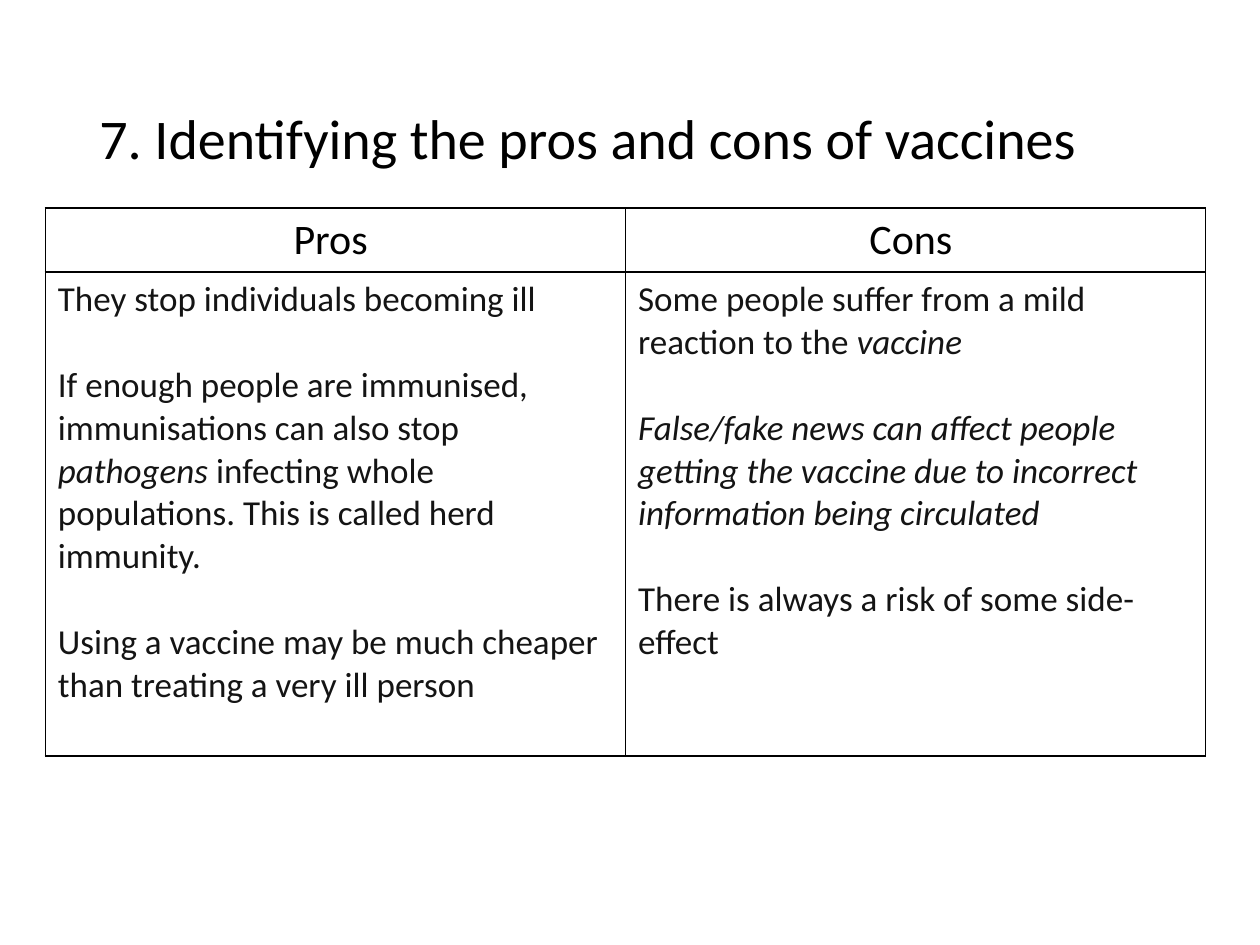
from pptx import Presentation, util as u
from pptx.dml.color import RGBColor
from pptx.enum import text
from pptx.oxml import parse_xml
from pptx.oxml.ns import nsdecls

FONT = "Calibri"
BODY_SIZE = 20
PARAGRAPH_GAP = 24.4

PROS = [
    [("They stop individuals becoming ill", False)],
    [
        ("If enough people are immunised, immunisations can also stop ", False),
        ("pathogens", True),
        (" infecting whole populations. This is called herd immunity.", False),
    ],
    [("Using a vaccine may be much cheaper than treating a very ill person", False)],
]
CONS = [
    [("Some people suffer from a mild reaction to the ", False), ("vaccine", True)],
    [("False/fake news can affect people getting the vaccine due to incorrect "
      "information being circulated ", True)],
    [("There is always a risk of some side-effect", False)],
]


def rgb(value):
    return RGBColor.from_string(value)


def add_run(p, words, size, color, italic=False):
    r = p.add_run()
    r.text = words
    r.font.name = FONT
    r.font.size = u.Pt(size)
    r.font.italic = italic
    r.font.color.rgb = rgb(color)


def add_border(cell, color, width):
    tc_pr = cell._tc.get_or_add_tcPr()
    for index, side in enumerate(("lnL", "lnR", "lnT", "lnB")):
        tc_pr.insert(index, parse_xml(
            f'<a:{side} {nsdecls("a")} w="{u.Pt(width)}"><a:solidFill>'
            f'<a:srgbClr val="{color}"/></a:solidFill></a:{side}>'))


def add_title(s, left, top, width, height):
    sp = s.shapes.add_textbox(left, top, width, height)
    tf = sp.text_frame
    tf.word_wrap = True
    tf.vertical_anchor = text.MSO_ANCHOR.MIDDLE
    p = tf.paragraphs[0]
    p.line_spacing = 0.9
    add_run(p, "7. Identifying the pros and cons of vaccines", 32, "000000")


def fill_body(tf, paragraphs):
    for index, runs in enumerate(paragraphs):
        p = tf.paragraphs[0] if index == 0 else tf.add_paragraph()
        if index:
            p.space_before = u.Pt(PARAGRAPH_GAP)
        for words, italic in runs:
            add_run(p, words, BODY_SIZE, "141414", italic)


def add_comparison(s, left, top, width, height):
    columns = [("Pros ", PROS), ("Cons ", CONS)]
    table = s.shapes.add_table(2, len(columns), left, top, width, height).table
    table.first_row = False
    table.horz_banding = False
    table.rows[0].height = u.Inches(0.51)
    table.rows[1].height = height - table.rows[0].height
    for index, (heading, paragraphs) in enumerate(columns):
        header, body = table.cell(0, index), table.cell(1, index)
        p = header.text_frame.paragraphs[0]
        p.alignment = text.PP_ALIGN.CENTER
        add_run(p, heading, 24, "000000")
        fill_body(body.text_frame, paragraphs)
        for cell in (header, body):
            cell.fill.background()
            add_border(cell, "000000", 1)


def main():
    prs = Presentation()
    prs.slide_width, prs.slide_height = u.Inches(10), u.Inches(7.5)
    s = prs.slides.add_slide(prs.slide_layouts[6])
    add_title(s, u.Inches(0.69), u.Inches(0.4), u.Inches(8.62), u.Inches(1.45))
    add_comparison(s, u.Inches(0.36), u.Inches(1.65), u.Inches(9.21), u.Inches(4.35))
    prs.save("out.pptx")


if __name__ == "__main__":
    main()
